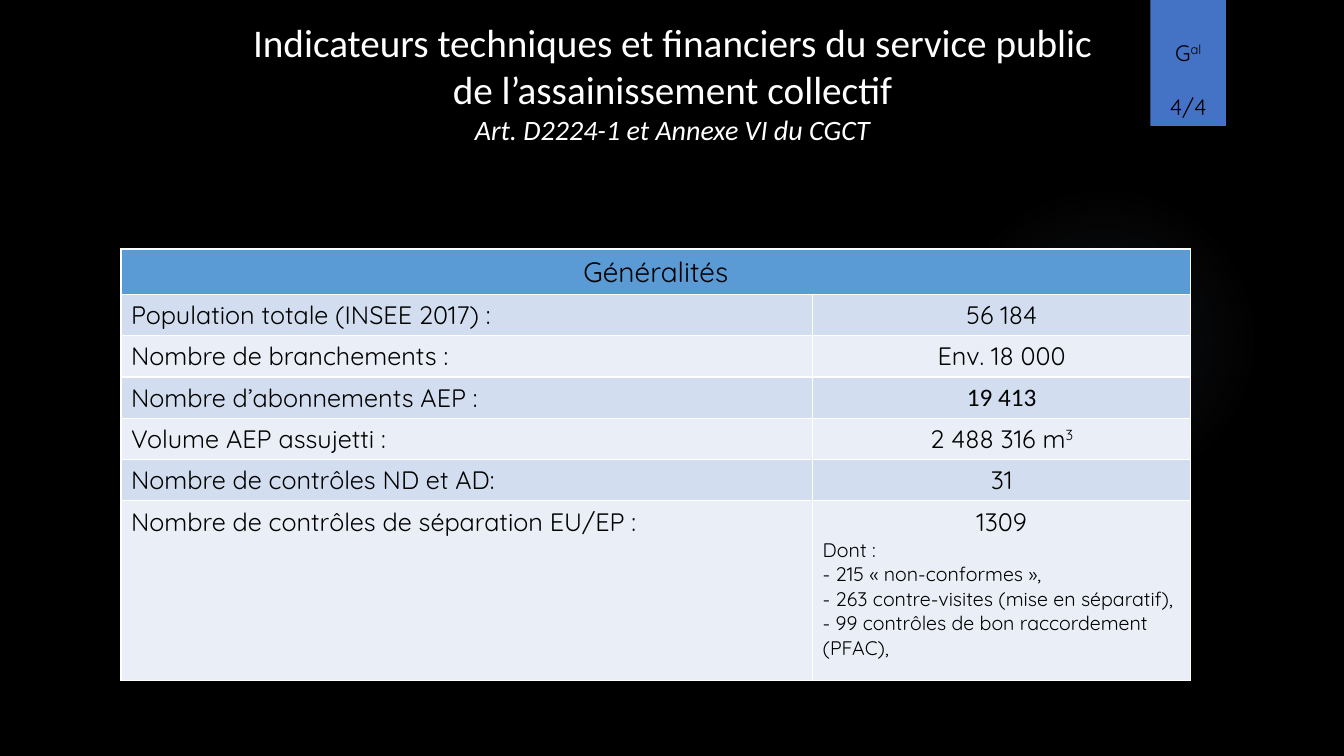
from dataclasses import dataclass

from pptx import Presentation
from pptx.dml.color import RGBColor
from pptx.enum.shapes import MSO_SHAPE as Shape
from pptx.enum.text import MSO_ANCHOR as Anchor, PP_ALIGN as Align
from pptx.oxml import parse_xml
from pptx.oxml.ns import nsdecls, qn
from pptx.util import Inches, Pt


@dataclass(frozen=True)
class Theme:
    """Colours, fonts and type sizes of the slide."""
    background: str = "000000"
    ink: str = "000000"
    white: str = "FFFFFF"
    tab: str = "4472C4"
    glow: str = "8497B0"
    header: str = "5B9BD5"
    bands: tuple = ("D2DEEF", "EAEFF7")
    title_font: str = "Calibri"
    body_font: str = "Quicksand"
    title: int = 28
    subtitle: int = 20
    header_size: int = 20
    body: int = 18
    label: int = 16
    detail: int = 14


class SlideBuilder:
    """Draws styled elements on one slide."""

    def __init__(self, presentation, theme):
        """Add a blank slide with the theme background."""
        self.theme = theme
        self.slide = presentation.slides.add_slide(presentation.slide_layouts[6])
        fill = self.slide.background.fill
        fill.solid()
        fill.fore_color.rgb = RGBColor.from_string(theme.background)

    def shape(self, kind, box, color):
        """Add a plain filled shape without line or shadow."""
        shape = self.slide.shapes.add_shape(kind, *map(Inches, box))
        shape.shadow.inherit = False
        shape.line.fill.background()
        shape.fill.solid()
        shape.fill.fore_color.rgb = RGBColor.from_string(color)
        return shape

    def glow(self, box, stops):
        """Add an ellipse that fades outwards; stops are position and opacity."""
        shape = self.shape(Shape.OVAL, box, self.theme.glow)
        marks = "".join(
            f'<a:gs pos="{position * 1000}"><a:srgbClr val="{self.theme.glow}">'
            f'<a:alpha val="{opacity * 1000}"/></a:srgbClr></a:gs>'
            for position, opacity in stops)
        gradient = parse_xml(
            f'<a:gradFill {nsdecls("a")} rotWithShape="1"><a:gsLst>{marks}</a:gsLst>'
            '<a:path path="circle"><a:fillToRect l="50000" t="50000" r="50000" b="50000"/>'
            '</a:path></a:gradFill>')
        properties = shape._element.spPr
        properties.replace(properties.find(qn("a:solidFill")), gradient)

    def set_lines(self, frame, lines):
        """Set paragraphs given as text and format values; ^ starts a superscript."""
        for index, (text, values) in enumerate(lines):
            paragraph = frame.paragraphs[0] if index == 0 else frame.add_paragraph()
            values = dict(values)
            paragraph.alignment = values.pop("align", Align.LEFT)
            paragraph.space_before = Pt(values.pop("before", 0))
            color = values.pop("color", self.theme.ink)
            style = {"name": self.theme.body_font, "bold": False, **values}
            for raised, part in enumerate(text.split("^")):
                run = paragraph.add_run()
                run.text = part
                for name, value in style.items():
                    setattr(run.font, name, value)
                run.font.color.rgb = RGBColor.from_string(color)
                if raised:
                    run._r.get_or_add_rPr().set("baseline", "30000")

    def text(self, box, lines):
        """Add a wrapping text box."""
        frame = self.slide.shapes.add_textbox(*map(Inches, box)).text_frame
        frame.word_wrap = True
        self.set_lines(frame, lines)

    def cell(self, cell, lines, color):
        """Fill one table cell, with thin white borders."""
        cell.fill.solid()
        cell.fill.fore_color.rgb = RGBColor.from_string(color)
        cell.vertical_anchor = Anchor.TOP
        self.set_lines(cell.text_frame, lines)
        for index, side in enumerate(("lnL", "lnR", "lnT", "lnB")):
            cell._tc.get_or_add_tcPr().insert(index, parse_xml(
                f'<a:{side} {nsdecls("a")} w="12700"><a:solidFill>'
                f'<a:srgbClr val="{self.theme.white}"/></a:solidFill></a:{side}>'))

    def table(self, box, widths, heights, header, rows):
        """Add a table with a merged header and banded rows."""
        theme = self.theme
        table = self.slide.shapes.add_table(
            len(heights), len(widths), *map(Inches, box)).table
        table.first_row = table.horz_banding = False
        for column, width in zip(table.columns, widths):
            column.width = Inches(width)
        for row, height in zip(table.rows, heights):
            row.height = Inches(height)
        table.cell(0, 0).merge(table.cell(0, len(widths) - 1))
        self.cell(table.cell(0, 0), header, theme.header)
        self.cell(table.cell(0, 1), [], theme.header)
        for index, (label, lines) in enumerate(rows):
            color = theme.bands[index % 2]
            self.cell(table.cell(index + 1, 0), [(label, {"size": Pt(theme.body)})], color)
            self.cell(table.cell(index + 1, 1), lines, color)


def main():
    """Build and save the slide."""
    presentation = Presentation()
    presentation.slide_width, presentation.slide_height = Inches(13.33), Inches(7.5)
    theme = Theme()
    builder = SlideBuilder(presentation, theme)

    builder.glow((9.41, 1.83, 3.08, 3.08), [(0, 7), (36, 6), (69, 0)])
    builder.shape(Shape.RECTANGLE, (11.41, 0, 0.75, 1.25), theme.tab)

    heading = {"name": theme.title_font, "color": theme.white, "align": Align.CENTER}
    builder.text((2.27, 0.13, 8.8, 1.4), [
        ("Indicateurs techniques et financiers du service public de l’assainissement collectif",
         {**heading, "size": Pt(theme.title)}),
        ("Art. D2224-1 et Annexe VI du CGCT",
         {**heading, "size": Pt(theme.subtitle), "italic": True}),
    ])

    value = {"size": Pt(theme.body), "align": Align.CENTER}
    detail = {"size": Pt(theme.detail)}
    details = ["Dont :", "- 215 « non-conformes »,",
               "- 263 contre-visites (mise en séparatif),",
               "- 99 contrôles de bon raccordement (PFAC),"]
    rows = [
        ("Population totale (INSEE 2017) :", [("56 184", value)]),
        ("Nombre de branchements :", [("Env. 18 000", value)]),
        ("Nombre d’abonnements AEP :", [("19 413", {**value, "name": theme.title_font})]),
        ("Volume AEP assujetti :", [("2 488 316 m^3", value)]),
        ("Nombre de contrôles ND et AD:", [("31", value)]),
        ("Nombre de contrôles de séparation EU/EP :",
         [("1309", value)] + [(line, detail) for line in details]),
    ]
    builder.table((1.2, 2.47, 10.61, 4.28), (6.86, 3.75), [0.45] + [0.41] * 5 + [1.78],
                  [("Généralités", {"size": Pt(theme.header_size), "align": Align.CENTER})], rows)

    label = {"size": Pt(theme.label), "align": Align.CENTER}
    builder.text((11.28, 0.34, 1.01, 0.82), [("G^al", label), ("4/4", {**label, "before": 19})])

    presentation.save("out.pptx")


if __name__ == "__main__":
    main()
